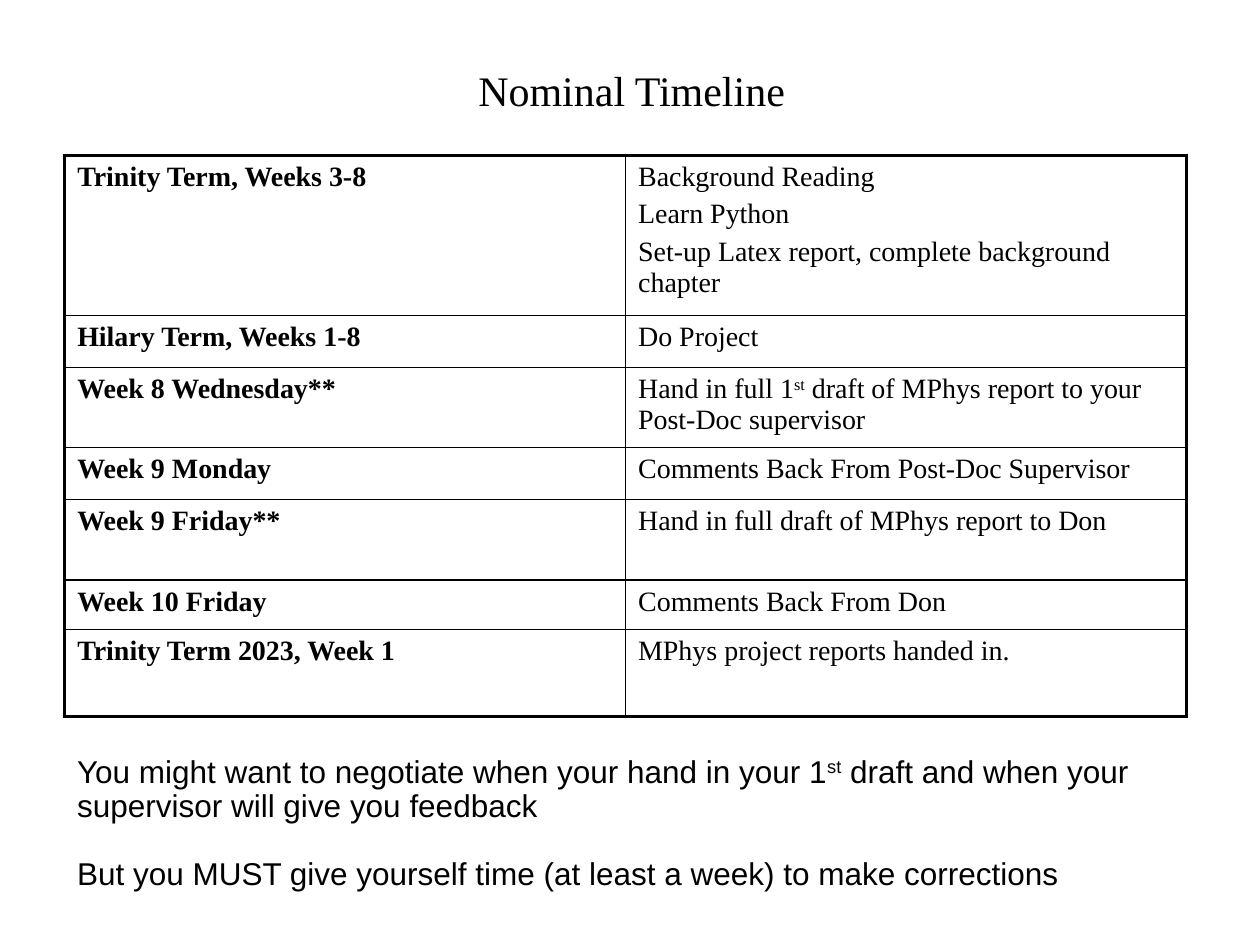
from dataclasses import dataclass

from pptx import Presentation
from pptx.dml.color import RGBColor
from pptx.enum.text import MSO_ANCHOR, PP_ALIGN
from pptx.oxml.ns import qn
from pptx.util import Pt
from lxml.etree import SubElement

HUES = {"ink": "000000"}
SERIF, SANS = "Times New Roman", "Arial"
THICK, THIN = 2.25, 1


@dataclass
class Row:
    when: str
    tasks: tuple[str, ...]
    high: float


ROWS = [
    Row("Trinity Term, Weeks 3-8", (
        "Background Reading",
        "Learn Python",
        "Set-up Latex report, complete background chapter",
    ), 91.5),
    Row("Hilary Term, Weeks 1-8", ("Do Project",), 29.75),
    Row("Week 8 Wednesday**", (
        "Hand in full 1^st^ draft of MPhys report to your Post-Doc supervisor",
    ), 45.5),
    Row("Week 9 Monday", ("Comments Back From Post-Doc Supervisor",), 29.75),
    Row("Week 9 Friday**", ("Hand in full draft of MPhys report to Don",), 46.25),
    Row("Week 10 Friday", ("Comments Back From Don",), 28.25),
    Row("Trinity Term 2023, Week 1", ("MPhys project reports handed in.",), 49.75),
]
NOTES = (
    "You might want to negotiate when your hand in your 1^st^ draft "
    "and when your supervisor will give you feedback",
    "But you MUST give yourself time (at least a week) to make corrections",
)


def write(frame, lines: tuple[str, ...], face: str, size: float, bold: bool = False,
          gap: float = 0, pitch: float = 1, align=PP_ALIGN.LEFT) -> None:
    """Write one paragraph per line, raising the parts set between carets."""
    frame.word_wrap = True
    for spot, line in enumerate(lines):
        para = frame.add_paragraph() if spot else frame.paragraphs[0]
        para.alignment = align
        para.line_spacing = pitch
        para.space_before = Pt(gap if spot else 0)
        for part, text in enumerate(line.split("^")):
            run = para.add_run()
            run.text = text
            font = run.font
            font.name, font.size, font.bold = face, Pt(size), bold
            font.color.rgb = RGBColor.from_string(HUES["ink"])
            if part % 2:
                run._r.get_or_add_rPr().set("baseline", "30000")


def edge(cell, side: str, width: float) -> None:
    """Draw one border of a cell."""
    line = SubElement(cell._tc.get_or_add_tcPr(), qn(f"a:ln{side}"), w=str(Pt(width)))
    fill = SubElement(line, qn("a:solidFill"))
    SubElement(fill, qn("a:srgbClr"), val=HUES["ink"])


def grid(slide, rows: list[Row]) -> None:
    """Draw the timeline table with a thick outer frame."""
    wide = 320.5
    last = len(rows) - 1
    table = slide.shapes.add_table(
        len(rows), 2, Pt(37), Pt(88.75), Pt(2 * wide), Pt(sum(r.high for r in rows))
    ).table
    table.first_row = table.horz_banding = False
    for col in table.columns:
        col.width = Pt(wide)
    for r, row in enumerate(rows):
        table.rows[r].height = Pt(row.high)
        for c, lines in enumerate(((row.when,), row.tasks)):
            cell = table.cell(r, c)
            write(cell.text_frame, lines, SERIF, 16, bold=c == 0, gap=3.5)
            outer = {"L": c == 0, "R": c == 1, "T": r == 0, "B": r == last}
            for side, rim in outer.items():
                edge(cell, side, THICK if rim else THIN)
            cell.fill.background()


def main() -> None:
    """Build and save the slide."""
    deck = Presentation()
    deck.slide_width, deck.slide_height = Pt(720), Pt(540)
    slide = deck.slides.add_slide(deck.slide_layouts[6])
    title = slide.shapes.add_textbox(Pt(37), Pt(26), Pt(648), Pt(50)).text_frame
    title.vertical_anchor = MSO_ANCHOR.MIDDLE
    write(title, ("Nominal Timeline",), SERIF, 24, align=PP_ALIGN.CENTER)
    grid(slide, ROWS)
    notes = slide.shapes.add_textbox(Pt(37), Pt(428.5), Pt(648), Pt(85.75)).text_frame
    write(notes, NOTES, SANS, 18, gap=19.5, pitch=0.9)
    deck.save("out.pptx")


if __name__ == "__main__":
    main()
